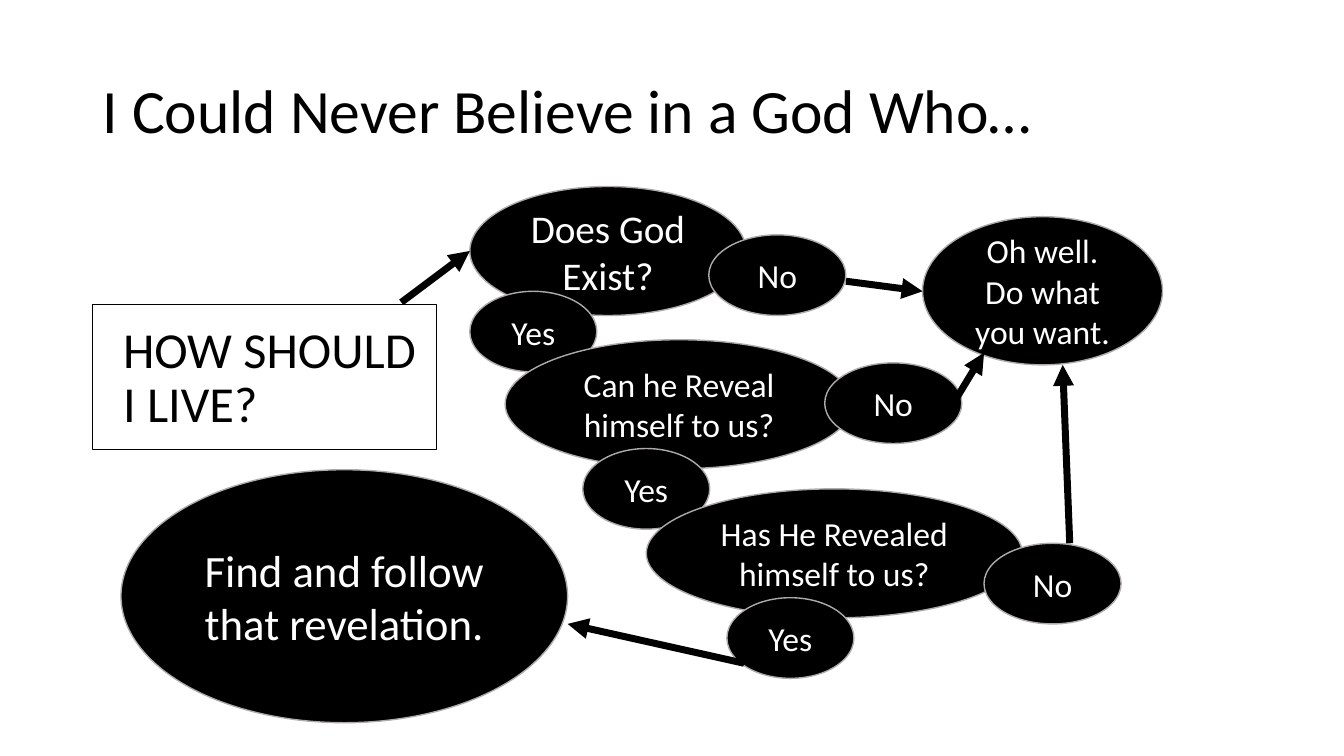
from typing import NamedTuple

from lxml import etree
from pptx import Presentation
from pptx import util as u
from pptx.dml.color import RGBColor
from pptx.enum import shapes, text
from pptx.oxml.ns import qn

PX = 9144  # EMU per px, 100 px to the inch
BLACK = RGBColor(0x00, 0x00, 0x00)
WHITE = RGBColor(0xFF, 0xFF, 0xFF)
GREY = RGBColor(0xAF, 0xAB, 0xAB)
FONT = "Calibri"


class Bubble(NamedTuple):
    words: str
    left: int
    top: int
    width: int
    height: int
    size: int = 24


class Arrow(NamedTuple):
    x1: int
    y1: int
    x2: int
    y2: int


def yes(left: int, top: int) -> Bubble:
    return Bubble("Yes", left, top, 126, 80)


def no(left: int, top: int) -> Bubble:
    return Bubble("No", left, top, 136, 80)


BUBBLES = [
    Bubble("Does God Exist?", 466, 185, 274, 128, 28),
    yes(466, 289),
    no(703, 233),
    Bubble("Oh well. Do what you want.", 915, 215, 238, 147),
    Bubble("Can he Reveal himself to us?", 501, 337, 345, 128),
    yes(578, 445),
    no(818, 360),
    Bubble("Has He Revealed himself to us?", 641, 485, 373, 128),
    yes(721, 593),
    no(976, 539),
    Bubble("Find and follow that revelation.", 120, 466, 443, 251, 32),
]

ARROWS = [
    Arrow(839, 279, 915, 289),
    Arrow(398, 300, 466, 249),
    Arrow(945, 401, 976, 350),
    Arrow(1061, 539, 1054, 362),
    Arrow(738, 658, 563, 619),
]


def px(*lengths: int) -> list[u.Emu]:
    return [u.Emu(length * PX) for length in lengths]


def write(shape, words: str, *, size: int, color: RGBColor = BLACK,
          align=text.PP_ALIGN.LEFT, anchor=text.MSO_ANCHOR.MIDDLE,
          spacing: float = 1.0, insets: tuple = (10, 5, 10, 5)) -> None:
    """Fill a shape with one formatted paragraph; insets run left, top, right, bottom."""
    frame = shape.text_frame
    frame.word_wrap = True
    frame.vertical_anchor = anchor
    (frame.margin_left, frame.margin_top,
     frame.margin_right, frame.margin_bottom) = px(*insets)
    paragraph = frame.paragraphs[0]
    paragraph.text = words
    paragraph.alignment = align
    paragraph.line_spacing = spacing
    font = paragraph.font
    font.name, font.size = FONT, u.Pt(size)
    font.color.rgb = color


def add_outlined(slide, kind, box: tuple, fill: RGBColor, line: RGBColor, weight: float):
    shape = slide.shapes.add_shape(kind, *px(*box))
    shape.shadow.inherit = False
    shape.fill.solid()
    shape.fill.fore_color.rgb = fill
    shape.line.color.rgb = line
    shape.line.width = u.Pt(weight)
    return shape


def add_bubble(slide, bubble: Bubble) -> None:
    box = (bubble.left, bubble.top, bubble.width, bubble.height)
    ellipse = add_outlined(slide, shapes.MSO_SHAPE.OVAL, box, BLACK, GREY, 1)
    write(ellipse, bubble.words, size=bubble.size, color=WHITE,
          align=text.PP_ALIGN.CENTER)


def add_question(slide) -> None:
    """Draw the opening question in a translucent white box."""
    question = add_outlined(slide, shapes.MSO_SHAPE.RECTANGLE, (92, 302, 341, 144),
                            WHITE, BLACK, 0.75)
    fill_color = question._element.spPr.find(qn("a:solidFill"))[0]
    etree.SubElement(fill_color, qn("a:alpha"), val="43000")
    write(question, "HOW SHOULD I LIVE?", size=36, anchor=text.MSO_ANCHOR.TOP,
          spacing=0.9, insets=(30, 20, 20, 5))


def add_arrow(slide, arrow: Arrow) -> None:
    connector = slide.shapes.add_connector(shapes.MSO_CONNECTOR.STRAIGHT, *px(*arrow))
    connector.line.color.rgb = BLACK
    connector.line.width = u.Pt(5)
    etree.SubElement(connector.line._get_or_add_ln(), qn("a:tailEnd"), type="triangle")
    etree.SubElement(connector._element.spPr, qn("a:effectLst"))


def main() -> None:
    deck = Presentation()
    deck.slide_width, deck.slide_height = px(1333, 750)
    slide = deck.slides.add_slide(deck.slide_layouts[6])

    title = slide.shapes.add_textbox(*px(92, 40, 1150, 145))
    write(title, "I Could Never Believe in a God Who…", size=44, spacing=0.9)

    for bubble in BUBBLES:
        add_bubble(slide, bubble)
    add_question(slide)
    for arrow in ARROWS:
        add_arrow(slide, arrow)

    deck.save("out.pptx")


if __name__ == "__main__":
    main()
